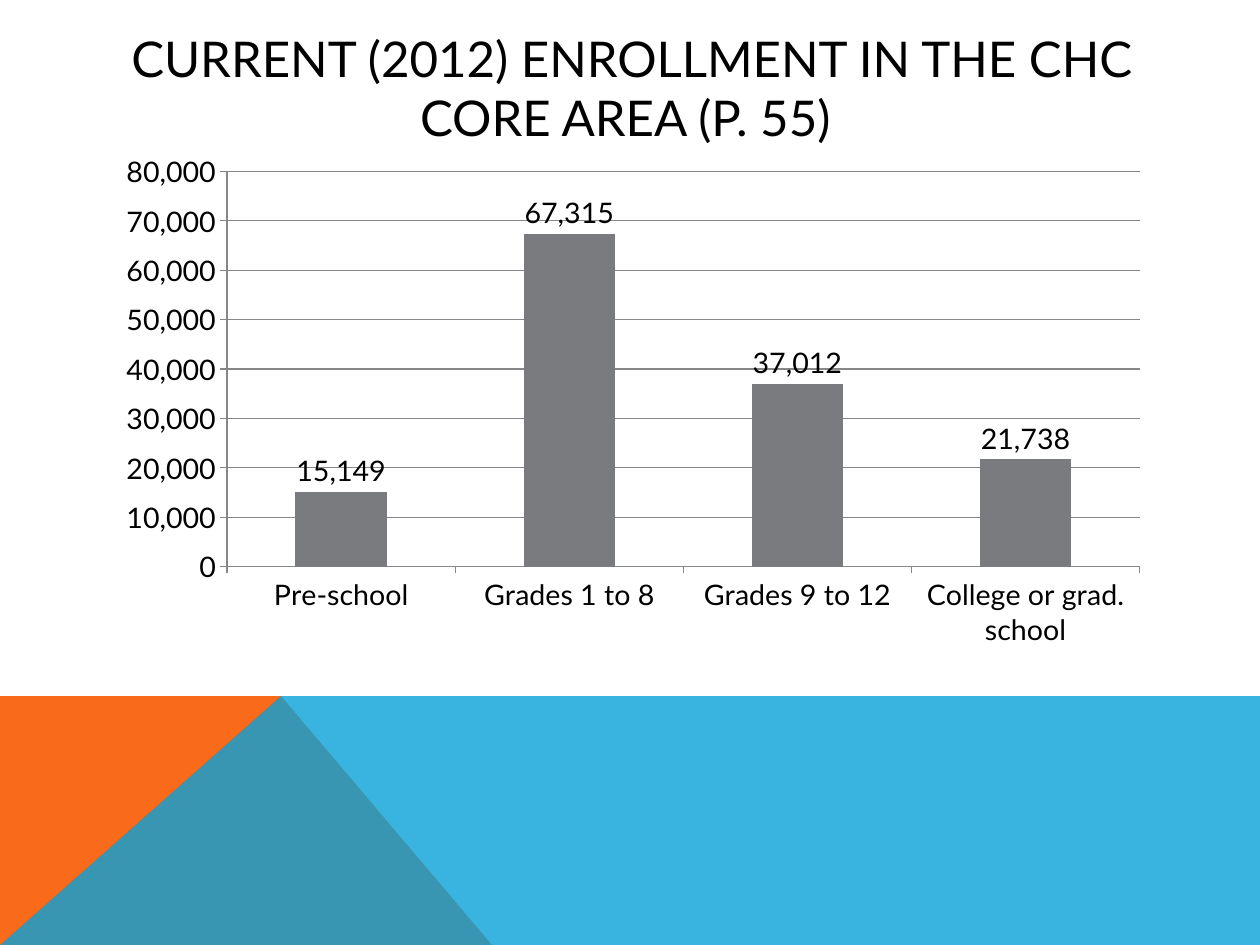
from lxml.etree import SubElement
from pptx import Presentation
from pptx.chart.data import CategoryChartData
from pptx.dml.color import RGBColor
from pptx.enum.chart import XL_CHART_TYPE, XL_LABEL_POSITION, XL_TICK_MARK
from pptx.enum.text import MSO_ANCHOR, PP_ALIGN
from pptx.oxml import parse_xml
from pptx.oxml.ns import nsdecls, qn
from pptx.util import Pt

# Content
TITLE = "CURRENT (2012) ENROLLMENT IN THE CHC CORE AREA (P. 55) "
ENROLLMENT = {
    "Pre-school": 15149,
    "Grades 1 to 8": 67315,
    "Grades 9 to 12": 37012,
    "College or grad. school": 21738,
}
FONT = "Lato"
NUMBER_FORMAT = "#,##0"
BLACK, BAR_GRAY, AXIS_GRAY = "000000", "797B7E", "878787"

# Layout in px
PX = 8000  # EMU
WIDTH, HEIGHT = 1260, 945
BAND_TOP, PEAK_X, SLOPE_END_X = 696, 281, 492
TITLE_BOX = (113, 50, 1037, 75)
CHART_BOX = (113, 152, 1037, 494)
PLOT = {"x": 0.11, "y": 0.04, "w": 0.88, "h": 0.81}

# Footer band: outline, colour, opacity in percent
BAND = [
    ([(0, HEIGHT), (0, BAND_TOP), (PEAK_X, BAND_TOP), (SLOPE_END_X, HEIGHT)], "F96A1B", 100),
    ([(0, HEIGHT), (PEAK_X, BAND_TOP), (WIDTH, BAND_TOP), (WIDTH, HEIGHT)], "08A1D9", 80),
]


def color(hex_string):
    return RGBColor.from_string(hex_string)


def emu(box):
    return [length * PX for length in box]


def style_font(font, size, hex_string):
    font.name = FONT
    font.size = Pt(size)
    font.color.rgb = color(hex_string)


def add_text(slide, text, box, size, hex_string=BLACK, align=PP_ALIGN.CENTER):
    frame = slide.shapes.add_textbox(*emu(box)).text_frame
    frame.word_wrap = True
    frame.vertical_anchor = MSO_ANCHOR.MIDDLE
    frame.margin_left = frame.margin_right = 12 * PX
    frame.margin_top = frame.margin_bottom = 6 * PX
    paragraph = frame.paragraphs[0]
    paragraph.alignment = align
    run = paragraph.add_run()
    run.text = text
    style_font(run.font, size, hex_string)


def add_band_part(slide, outline, hex_string, opacity):
    builder = slide.shapes.build_freeform(*outline[0], scale=PX)
    builder.add_line_segments(outline[1:], close=True)
    part = builder.convert_to_shape()
    part.shadow.inherit = False
    part.line.fill.background()
    part.fill.solid()
    part.fill.fore_color.rgb = color(hex_string)
    if opacity < 100:
        rgb = part.fill._xPr.find(".//" + qn("a:srgbClr"))
        SubElement(rgb, qn("a:alpha"), val=str(opacity * 1000))


def fix_plot_area(chart):
    plot_area = chart._chartSpace.chart.plotArea
    for layout in plot_area.findall(qn("c:layout")):
        plot_area.remove(layout)
    modes = '<c:xMode val="edge"/><c:yMode val="edge"/>'
    sizes = "".join(f'<c:{side} val="{share}"/>' for side, share in PLOT.items())
    plot_area.insert(0, parse_xml(
        f'<c:layout {nsdecls("c")}><c:manualLayout><c:layoutTarget val="inner"/>'
        f"{modes}{sizes}</c:manualLayout></c:layout>"))


def add_enrollment_chart(slide):
    data = CategoryChartData(number_format=NUMBER_FORMAT)
    data.categories = list(ENROLLMENT)
    data.add_series("Series 1", list(ENROLLMENT.values()))
    chart = slide.shapes.add_chart(
        XL_CHART_TYPE.COLUMN_CLUSTERED, *emu(CHART_BOX), data).chart
    chart.has_legend = chart.has_title = False
    style_font(chart.font, 18, BLACK)
    fix_plot_area(chart)

    # Axes
    values = chart.value_axis
    values.minimum_scale, values.maximum_scale, values.major_unit = 0, 80000, 10000
    values.has_major_gridlines = True
    values.tick_labels.number_format = NUMBER_FORMAT
    values.tick_labels.number_format_is_linked = False
    for axis in (chart.category_axis, values):
        axis.major_tick_mark = XL_TICK_MARK.OUTSIDE
    for line in (chart.category_axis.format.line, values.format.line,
                 values.major_gridlines.format.line):
        line.color.rgb = color(AXIS_GRAY)
        line.width = Pt(0.75)

    # Columns and their values
    plot = chart.plots[0]
    plot.gap_width = 150
    plot.vary_by_categories = False
    columns = plot.series[0]
    columns.format.fill.solid()
    columns.format.fill.fore_color.rgb = color(BAR_GRAY)
    labels = columns.data_labels
    labels.show_value = True
    labels.number_format = NUMBER_FORMAT
    labels.number_format_is_linked = False
    labels.position = XL_LABEL_POSITION.OUTSIDE_END
    style_font(labels.font, 18, BLACK)


def main():
    deck = Presentation()
    deck.slide_width, deck.slide_height = emu((WIDTH, HEIGHT))
    slide = deck.slides.add_slide(deck.slide_layouts[6])
    for outline, hex_string, opacity in BAND:
        add_band_part(slide, outline, hex_string, opacity)
    add_text(slide, TITLE, TITLE_BOX, size=31)
    add_enrollment_chart(slide)
    deck.save("out.pptx")


if __name__ == "__main__":
    main()
